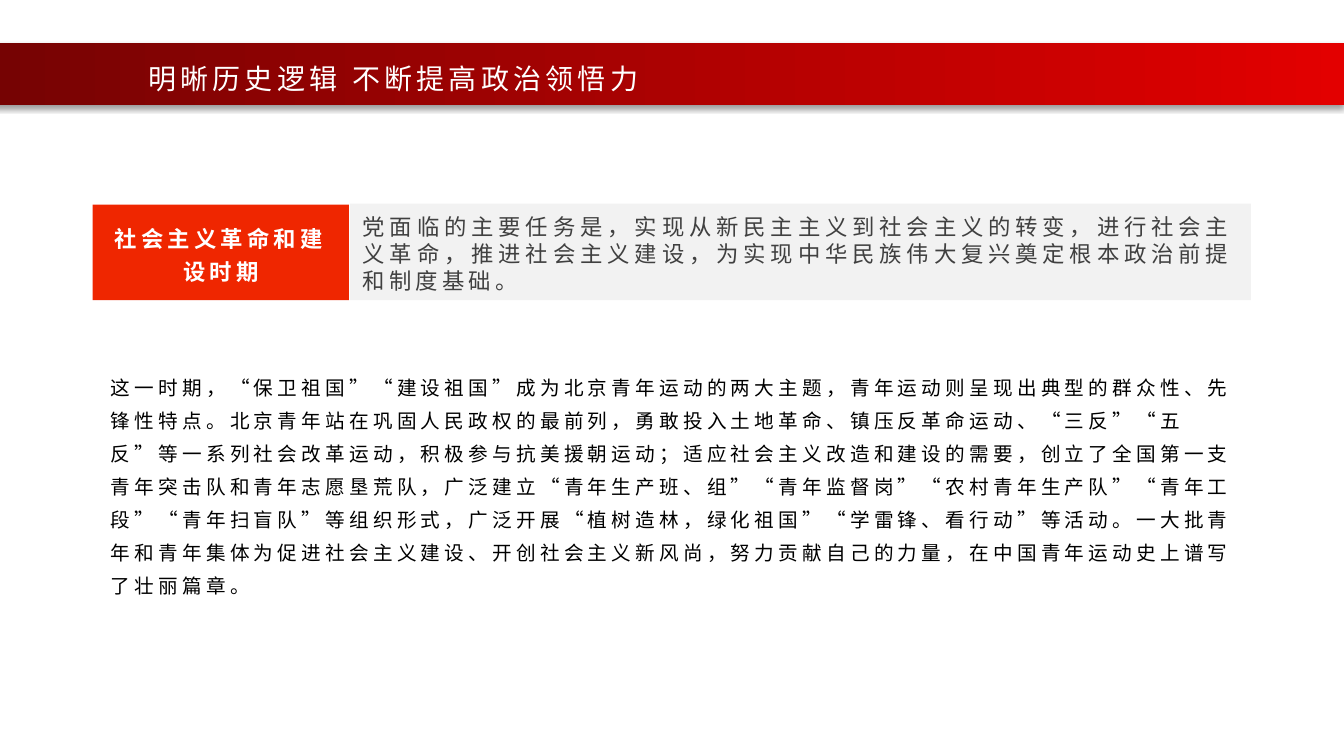
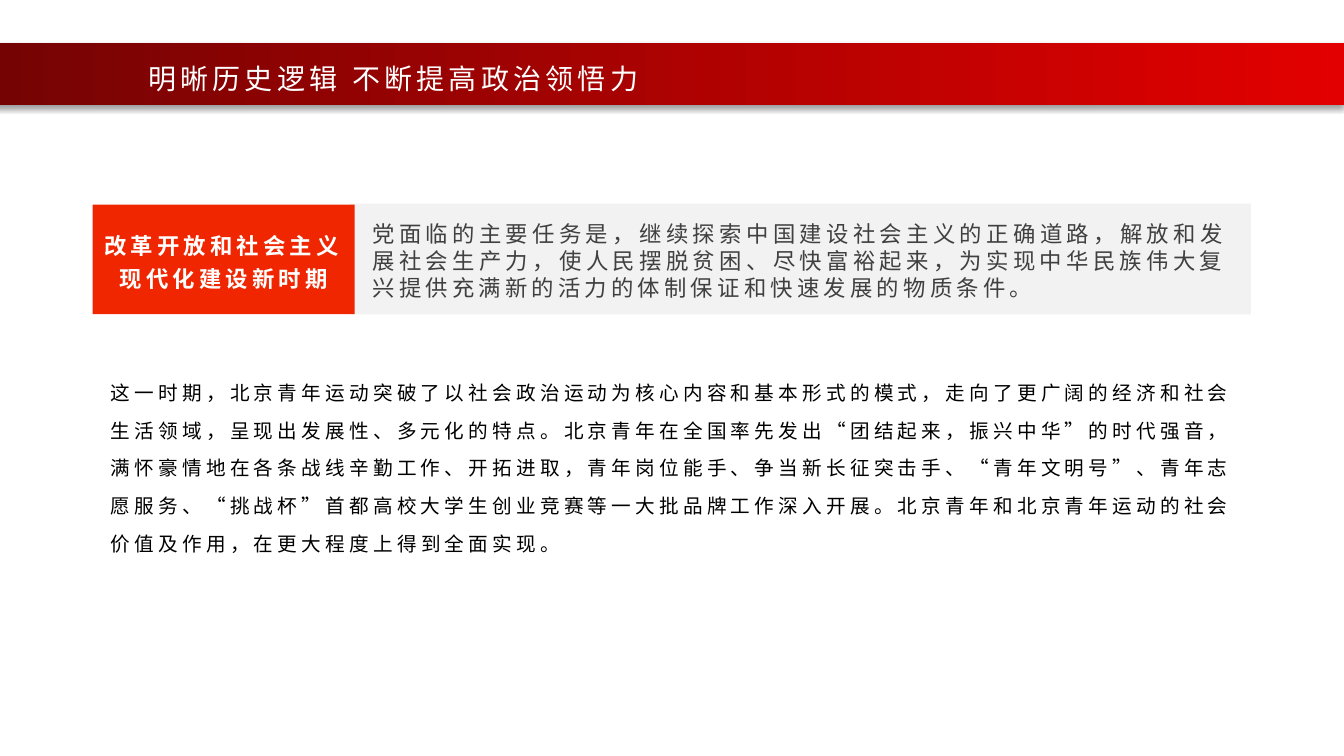
"""Build two slides on the history of the Beijing youth movement."""
from lxml import etree
from pptx import Presentation
from pptx.dml.color import RGBColor
from pptx.enum import lang, shapes, text
from pptx.oxml import ns
from pptx.util import Pt

FONT = "Noto Sans CJK SC"
COLORS = {
    "bright": "E30000", "dark": "760303", "label": "EF2600", "panel": "F2F2F2",
    "white": "FFFFFF", "gray": "404040", "black": "000000",
}
ALIGN = text.PP_ALIGN
TITLE = "明晰历史逻辑 不断提高政治领悟力"
PERIODS = [
    {
        "label": "社会主义革命和建设时期",
        "task": "党面临的主要任务是，实现从新民主主义到社会主义的转变，进行社会主义革命，推进社会主义建设，为实现中华民族伟大复兴奠定根本政治前提和制度基础。",
        "body": "这一时期，“保卫祖国”“建设祖国”成为北京青年运动的两大主题，青年运动则呈现出典型的群众性、先锋性特点。北京青年站在巩固人民政权的最前列，勇敢投入土地革命、镇压反革命运动、“三反”“五反”等一系列社会改革运动，积极参与抗美援朝运动；适应社会主义改造和建设的需要，创立了全国第一支青年突击队和青年志愿垦荒队，广泛建立“青年生产班、组”“青年监督岗”“农村青年生产队”“青年工段”“青年扫盲队”等组织形式，广泛开展“植树造林，绿化祖国”“学雷锋、看行动”等活动。一大批青年和青年集体为促进社会主义建设、开创社会主义新风尚，努力贡献自己的力量，在中国青年运动史上谱写了壮丽篇章。",
        "panel_h": 69, "label_w": 183, "task_box": (252, 149, 636.5, 65.5),
        "body_h": 173.5, "spacing": 1.4,
    },
    {
        "label": "改革开放和社会主义现代化建设新时期",
        "task": "党面临的主要任务是，继续探索中国建设社会主义的正确道路，解放和发展社会生产力，使人民摆脱贫困、尽快富裕起来，为实现中华民族伟大复兴提供充满新的活力的体制保证和快速发展的物质条件。",
        "body": "这一时期，北京青年运动突破了以社会政治运动为核心内容和基本形式的模式，走向了更广阔的经济和社会生活领域，呈现出发展性、多元化的特点。北京青年在全国率先发出“团结起来，振兴中华”的时代强音，满怀豪情地在各条战线辛勤工作、开拓进取，青年岗位能手、争当新长征突击手、“青年文明号”、青年志愿服务、“挑战杯”首都高校大学生创业竞赛等一大批品牌工作深入开展。北京青年和北京青年运动的社会价值及作用，在更大程度上得到全面实现。",
        "panel_h": 79, "label_w": 187, "task_box": (259, 154, 624.5, 65.5),
        "body_h": 142.5, "spacing": 1.6,
    },
]


def write(sp, content, box=None, size=16, color="black", bold=False,
          align=ALIGN.LEFT, spacing=1.0, anchor=text.MSO_ANCHOR.TOP):
    if box:
        sp.left, sp.top, sp.width, sp.height = map(Pt, box)
    tf = sp.text_frame
    tf.word_wrap = True
    tf.auto_size = text.MSO_AUTO_SIZE.NONE
    tf.vertical_anchor = anchor
    p = tf.paragraphs[0]
    p.alignment, p.line_spacing, p.space_before = align, spacing, Pt(0)
    r = p.add_run()
    r.text = content
    r.font.size, r.font.bold, r.font.name = Pt(size), bold, FONT
    r.font.color.rgb = RGBColor.from_string(COLORS[color])
    r.font.language_id = lang.MSO_LANGUAGE_ID.SIMPLIFIED_CHINESE
    rpr = r._r.get_or_add_rPr()
    rpr.set("spc", "300")
    etree.SubElement(rpr, ns.qn("a:ea"), typeface=FONT)
    return p


def rectangle(s, box, color):
    sp = s.shapes.add_shape(shapes.MSO_SHAPE.RECTANGLE, *map(Pt, box))
    sp.shadow.inherit = False
    sp.line.fill.background()
    sp.fill.solid()
    sp.fill.fore_color.rgb = RGBColor.from_string(COLORS[color])
    return sp


prs = Presentation()
prs.slide_width, prs.slide_height = Pt(960), Pt(540)
layout = prs.slide_layouts[1]
slides = [prs.slides.add_slide(layout) for _ in PERIODS]

band = rectangle(slides[0], (-3.6, 31, 964.8, 44), "bright")
band.fill.gradient()
band.fill.gradient_angle = 180
for stop, color, position in zip(band.fill.gradient_stops, ("bright", "dark"), (0, 1)):
    stop.color.rgb = RGBColor.from_string(COLORS[color])
    stop.position = position
effects = band.element.spPr.find(ns.qn("a:effectLst"))
shadow = etree.SubElement(effects, ns.qn("a:outerShdw"), blurRad=str(Pt(4)), dist=str(Pt(3)),
                          dir="8100000", algn="tr", rotWithShape="0")
shade = etree.SubElement(shadow, ns.qn("a:srgbClr"), val=COLORS["black"])
etree.SubElement(shade, ns.qn("a:alpha"), val="40000")
layout.shapes.element.insert(2, band.element)

for s, period in zip(slides, PERIODS):
    write(s.shapes.title, TITLE, (98.6, 40.3, 421, 31.5), size=20, color="white")

    rectangle(s, (250, 145.5, 643.5, period["panel_h"]), "panel")
    label = rectangle(s, (66.25, 146.25, period["label_w"], period["panel_h"] - 0.75), "label")
    write(label, period["label"], color="white", bold=True, align=ALIGN.CENTER,
          spacing=1.2, anchor=text.MSO_ANCHOR.MIDDLE)
    task = s.shapes.add_textbox(*map(Pt, period["task_box"]))
    write(task, period["task"], color="gray", align=ALIGN.JUSTIFY)

    p = write(s.placeholders[1], period["body"], (72, 258.5, 821.5, period["body_h"]),
              size=14, spacing=period["spacing"])
    ppr = p._p.get_or_add_pPr()
    ppr.set("marL", "0")
    ppr.set("indent", "0")
    etree.SubElement(ppr, ns.qn("a:buNone"))

prs.save("out.pptx")
